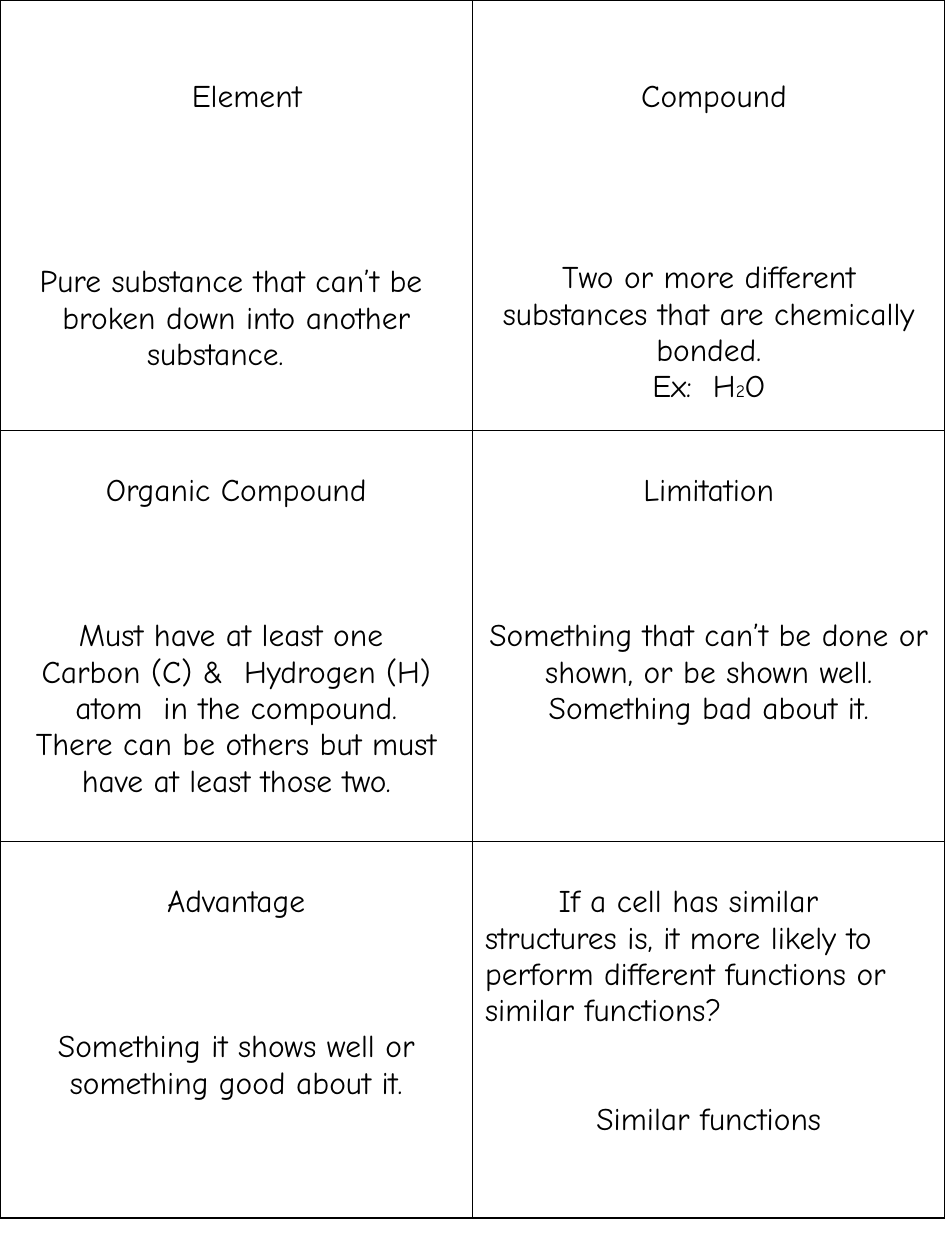
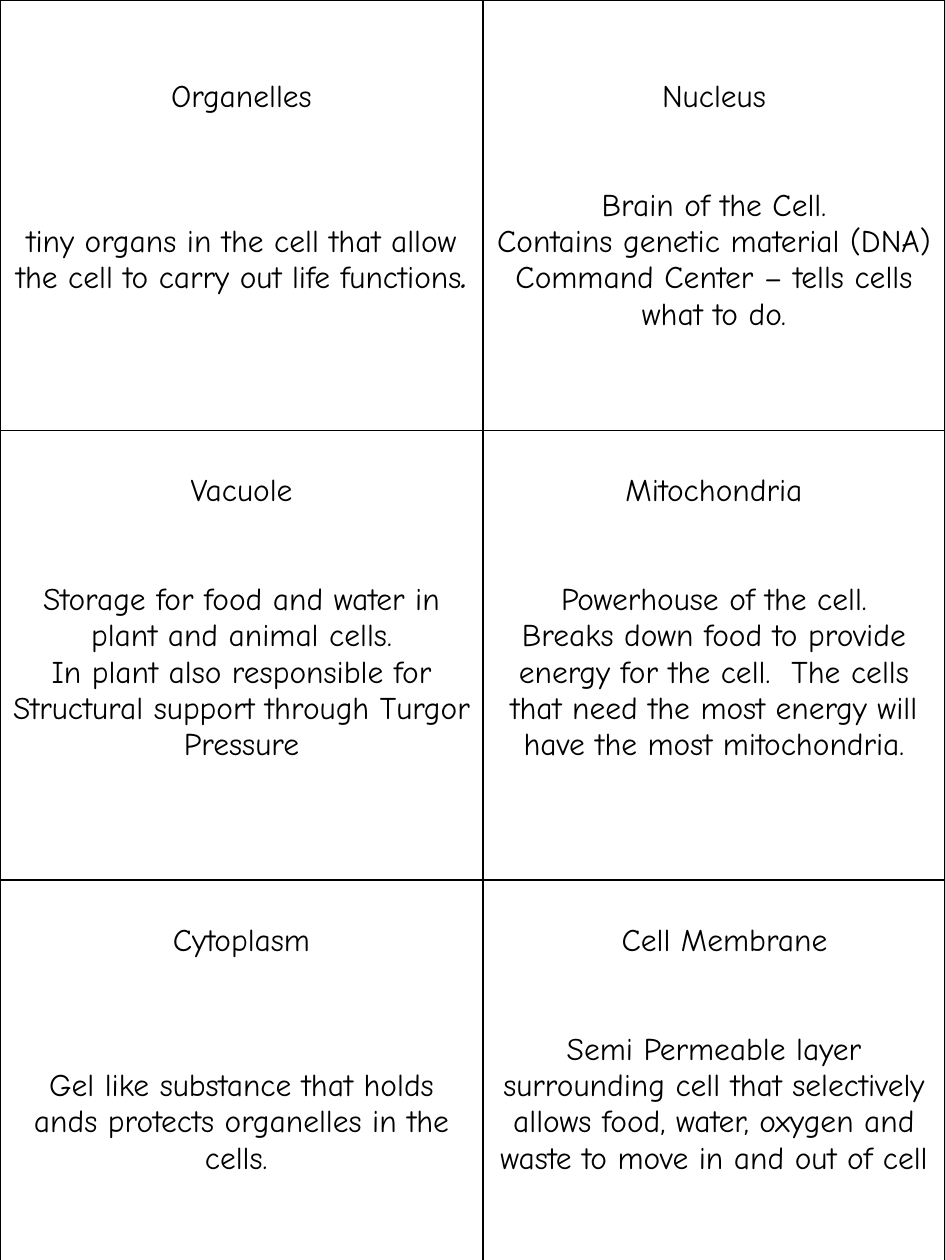
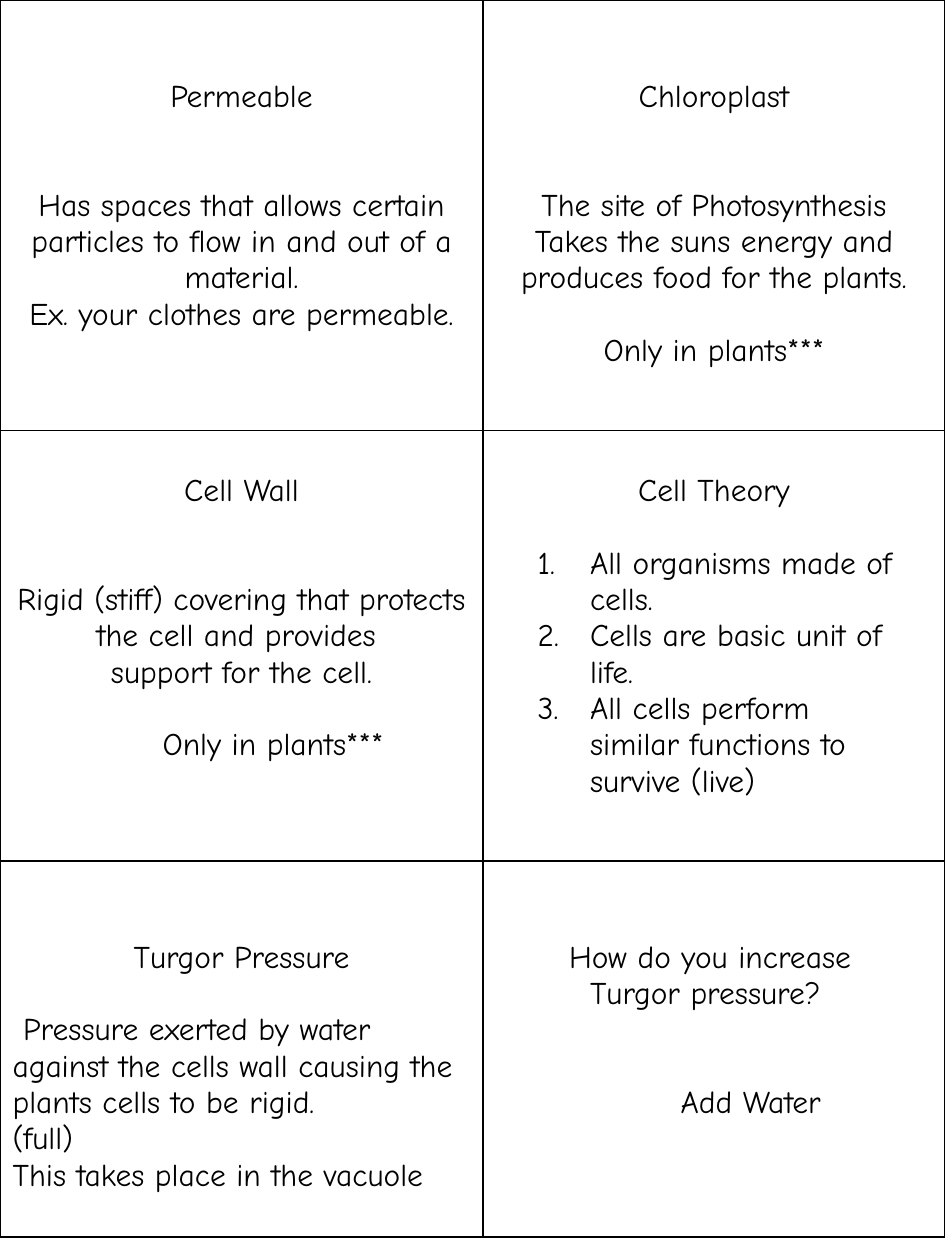
from dataclasses import dataclass

from lxml.etree import SubElement
from pptx import Presentation
from pptx.dml.color import RGBColor
from pptx.enum.text import PP_ALIGN
from pptx.oxml.ns import qn
from pptx.util import Pt

BLACK = RGBColor(0x00, 0x00, 0x00)
WHITE = RGBColor(0xFF, 0xFF, 0xFF)
FONT = "Comic Neue"
TEXT_SIZE = 18
LINE_HEIGHT = 20.74
CELL_MARGIN = 3.6
BORDER_WIDTH = 1
NUMBER_WIDTH = 30


@dataclass
class Line:
    """One paragraph; gap counts empty lines above it, indents are in points."""
    text: str
    gap: float = 0
    centered: bool = True
    left: float = 0
    right: float = 0
    first: float = 0
    numbered: bool = False
    tail: tuple = ()  # further runs: (text, size, bold and italic)


def plain(text, **options):
    return Line(text, centered=False, **options)


def step(text, **options):
    return plain(text, left=24 + NUMBER_WIDTH, first=-NUMBER_WIDTH, numbered=True, **options)


# Each sheet: column widths, row heights, empty lines above each row's text, cards
SHEETS = [
    ((270, 270), (246, 235, 215), (2, 1, 1), [
        [[Line("Element", left=12),
          Line("Pure substance that can’t be ", gap=4.11),
          Line("broken down into another"),
          Line("substance.", right=24)],
         [Line("Compound", left=6),
          Line("Two or more different substances that are chemically bonded.", gap=4),
          Line("Ex:  H", tail=(("2", 10, False), ("O", TEXT_SIZE, False)))]],
        [[Line("Organic Compound"),
          Line("Must have at least one ", gap=3),
          Line("Carbon (C) &  Hydrogen (H)"),
          Line("atom  in the compound."),
          Line("There can be others but must have at least those two.")],
         [Line("Limitation"),
          Line("Something that can’t be done or shown, or be shown well.", gap=3),
          Line("Something bad about it.")]],
        [[Line("Advantage"),
          Line("Something it shows well or something good about it.", gap=3)],
         [plain("If a cell has similar structures is, it more likely to perform "
                "different functions or similar functions?", first=42),
          Line("Similar functions", gap=2)]],
    ]),
    ((276, 264), (246, 257, 276), (2, 1, 1), [
        [[Line("Organelles"),
          Line("tiny organs in the cell that allow the cell to carry out life functions",
               gap=3, tail=((". ", TEXT_SIZE, True),))],
         [Line("Nucleus"),
          Line("Brain of the Cell.", gap=2),
          Line("Contains genetic material (DNA)"),
          Line("Command Center – tells cells what to do.")]],
        [[Line("Vacuole"),
          Line("Storage for food and water in plant and animal cells.", gap=2),
          Line("In plant also responsible for"),
          Line("Structural support through Turgor Pressure")],
         [Line("Mitochondria"),
          Line("Powerhouse of the cell.", gap=2),
          Line("Breaks down food to provide energy for the cell.  The cells that need "
               "the most energy will have the most mitochondria.")]],
        [[Line("Cytoplasm"),
          Line("Gel like substance that holds", gap=3),
          Line("ands protects organelles in the cells. ")],
         [Line("Cell Membrane", left=12),
          Line("Semi Permeable layer surrounding cell that selectively allows food, "
               "water, oxygen and waste to move in and out of cell", gap=2)]],
    ]),
    ((276, 264), (246, 246, 215), (2, 1, 2), [
        [[Line("Permeable"),
          Line("Has spaces that allows certain particles to flow in and out of a material.",
               gap=2),
          Line("Ex. your clothes are permeable.")],
         [Line("Chloroplast"),
          Line("The site of Photosynthesis", gap=2),
          Line("Takes the suns energy and produces food for the plants."),
          Line("Only in plants***", gap=1)]],
        [[Line("Cell Wall"),
          Line("Rigid (stiff) covering that protects the cell and provides ", gap=2),
          Line("support for the cell."),
          Line("Only in plants***", gap=1, left=36)],
         [Line("Cell Theory"),
          step("All organisms made of\ncells.", gap=1),
          step("Cells are basic unit of\nlife."),
          step("All cells perform\nsimilar functions to\nsurvive (live)")]],
        [[Line("Turgor Pressure"),
          plain(" Pressure exerted by water", gap=1),
          plain("against the cells wall causing the plants cells to be rigid."),
          plain("(full)"),
          plain("This takes place in the vacuole")],
         [plain("How do you increase", left=42),
          plain("Turgor pressure?", left=54),
          Line("Add Water", gap=2, left=42)]],
    ]),
]


def add_run(paragraph, text, size=TEXT_SIZE, emphasis=False):
    run = paragraph.add_run()
    run.text = text
    font = run.font
    font.name, font.size = FONT, Pt(size)
    font.bold = font.italic = emphasis
    font.color.rgb = BLACK


def write_line(paragraph, line):
    paragraph.alignment = PP_ALIGN.CENTER if line.centered else PP_ALIGN.LEFT
    paragraph.space_before = Pt(line.gap * LINE_HEIGHT)
    properties = paragraph._p.get_or_add_pPr()
    for name, length in (("marL", line.left), ("marR", line.right), ("indent", line.first)):
        properties.set(name, str(Pt(length)))
    if line.numbered:
        SubElement(properties, qn("a:buFont"), typeface=FONT)
        SubElement(properties, qn("a:buAutoNum"), type="arabicPeriod")
    for index, part in enumerate(line.text.split("\n")):
        if index:
            paragraph.add_line_break()
        add_run(paragraph, part)
    for text, size, emphasis in line.tail:
        add_run(paragraph, text, size, emphasis)


def style_cell(cell, lines_above):
    cell.margin_top = Pt(CELL_MARGIN + lines_above * LINE_HEIGHT)
    cell.margin_bottom = Pt(CELL_MARGIN)
    properties = cell._tc.get_or_add_tcPr()
    for side in ("lnL", "lnR", "lnT", "lnB"):
        border = SubElement(properties, qn(f"a:{side}"), w=str(Pt(BORDER_WIDTH)))
        SubElement(SubElement(border, qn("a:solidFill")), qn("a:srgbClr"), val=str(BLACK))
    cell.fill.solid()
    cell.fill.fore_color.rgb = WHITE


def add_sheet(presentation, widths, heights, lines_above, cards):
    slide = presentation.slides.add_slide(presentation.slide_layouts[6])
    table = slide.shapes.add_table(len(heights), len(widths), 0, 0,
                                   Pt(sum(widths)), Pt(sum(heights))).table
    table.first_row = table.horz_banding = False
    for column, width in zip(table.columns, widths):
        column.width = Pt(width)
    for row, height, above, row_cards in zip(table.rows, heights, lines_above, cards):
        row.height = Pt(height)
        for cell, lines in zip(row.cells, row_cards):
            style_cell(cell, above)
            frame = cell.text_frame
            for index, line in enumerate(lines):
                write_line(frame.add_paragraph() if index else frame.paragraphs[0], line)


def main():
    presentation = Presentation()
    presentation.slide_width, presentation.slide_height = Pt(540), Pt(720)
    for sheet in SHEETS:
        add_sheet(presentation, *sheet)
    presentation.save("out.pptx")


if __name__ == "__main__":
    main()
